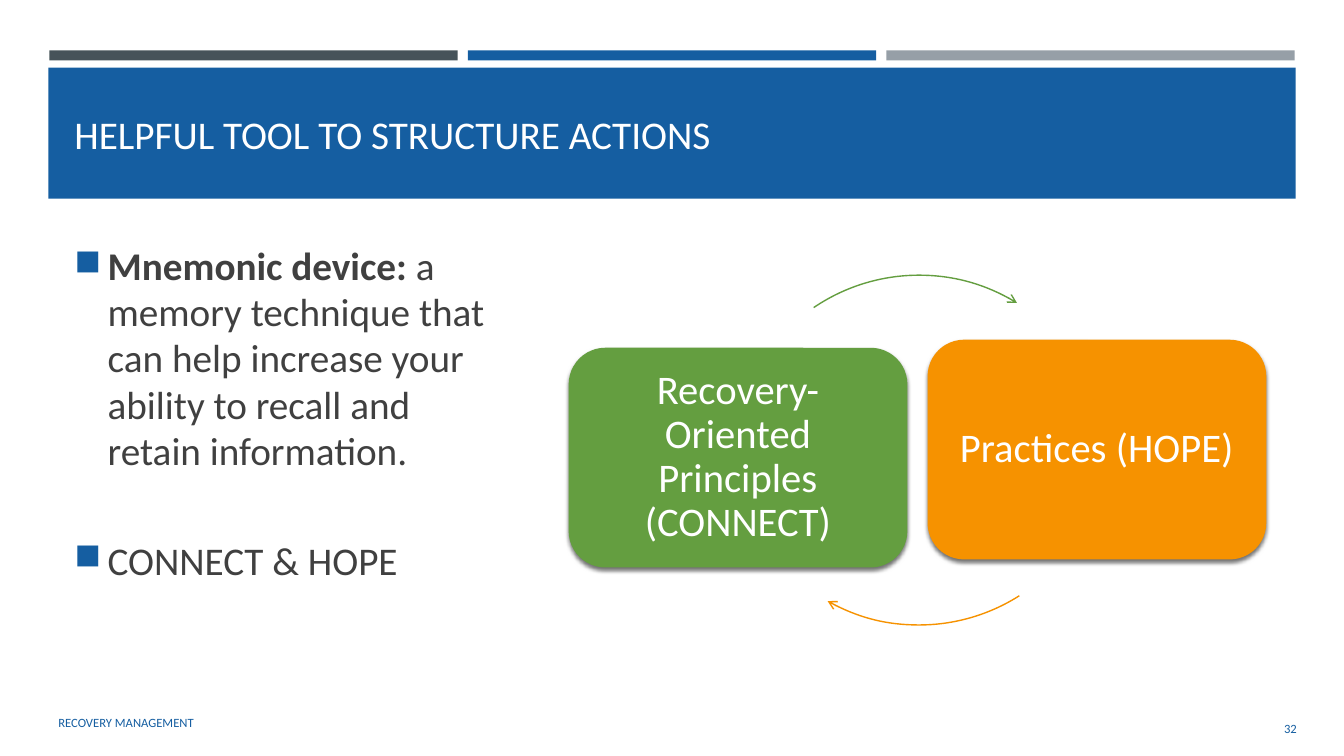
import dataclasses

import lxml.etree
import pptx
import pptx.dml.color
import pptx.enum.shapes
import pptx.enum.text
import pptx.oxml
import pptx.oxml.ns
import pptx.util

Inches = pptx.util.Inches
Pt = pptx.util.Pt
Kind = pptx.enum.shapes.MSO_SHAPE
Align = pptx.enum.text.PP_ALIGN
Anchor = pptx.enum.text.MSO_ANCHOR
qn = pptx.oxml.ns.qn


@dataclasses.dataclass(frozen=True)
class Theme:
    font: str = "Calibri"
    blue: str = "155EA1"
    slate: str = "465359"
    gray: str = "969FA7"
    ink: str = "404040"
    white: str = "FFFFFF"
    black: str = "000000"
    green: str = "649E40"
    gold: str = "F69200"
    small: int = 9
    large: int = 28
    label: int = 29


def tint(code):
    return pptx.dml.color.RGBColor.from_string(code)


def apply(target, values):
    for name, value in values.items():
        setattr(target, name, value)


def child(parent, tag, **attrs):
    node = lxml.etree.SubElement(parent, qn(tag))
    for name, value in attrs.items():
        node.set(name, str(value))
    return node


class Deck:
    def __init__(self, slide, theme):
        self.slide = slide
        self.theme = theme

    def shape(self, kind, box, fill):
        shape = self.slide.shapes.add_shape(kind, *map(Inches, box))
        shape.shadow.inherit = False
        if fill:
            shape.fill.solid()
            shape.fill.fore_color.rgb = tint(fill)
        else:
            shape.fill.background()
        shape.line.fill.background()
        return shape

    def words(self, para, parts, size, color, **form):
        apply(para, form)
        for words, bold in parts:
            run = para.add_run()
            run.text = words
            apply(run.font, {"name": self.theme.font, "size": Pt(size), "bold": bold})
            run.font.color.rgb = tint(color)

    def text(self, box, words, size, color, align=Align.LEFT):
        frame = self.slide.shapes.add_textbox(*map(Inches, box)).text_frame
        apply(frame, {"word_wrap": True, "vertical_anchor": Anchor.MIDDLE})
        self.words(frame.paragraphs[0], [(words, False)], size, color, alignment=align)

    def bullets(self, box, items):
        frame = self.slide.shapes.add_textbox(*map(Inches, box)).text_frame
        frame.word_wrap = True
        for index, parts in enumerate(items):
            para = frame.add_paragraph() if index else frame.paragraphs[0]
            form = {"line_spacing": 0.98, "space_before": Pt(46 if index else 0)}
            apply(para, form)
            props = para._p.get_or_add_pPr()
            indent = Inches(0.33)
            props.set("marL", str(indent))
            props.set("indent", str(-indent))
            child(child(props, "a:buClr"), "a:srgbClr", val=self.theme.blue)
            child(props, "a:buSzPct", val=92000)
            child(props, "a:buChar", char="■")
            self.words(para, parts, self.theme.large, self.theme.ink)

    def card(self, box, words, fill):
        card = self.shape(Kind.ROUNDED_RECTANGLE, box, fill)
        glow = child(
            card._element.spPr.find(qn("a:effectLst")), "a:outerShdw",
            blurRad=Pt(3), dist=Pt(2), dir=90 * 60000, algn="ctr", rotWithShape=0,
        )
        child(child(glow, "a:srgbClr", val=self.theme.black), "a:alpha", val=55000)
        frame = card.text_frame
        sides = ("left", "top", "right", "bottom")
        apply(frame, {f"margin_{side}": Inches(0.12) for side in sides})
        apply(frame, {"word_wrap": True, "vertical_anchor": Anchor.MIDDLE})
        self.words(
            frame.paragraphs[0], [(words, False)], self.theme.label, self.theme.white,
            alignment=Align.CENTER, line_spacing=0.9,
        )

    def arc(self, box, start, end, color):
        arc = self.shape(Kind.ARC, box, None)
        for index, angle in enumerate((start, end)):
            arc.adjustments[index] = angle * 0.6
        arc.line.color.rgb = tint(color)
        arc.line.width = Pt(1)
        child(arc._element.spPr.get_or_add_ln(), "a:tailEnd", type="arrow")


def main():
    show = pptx.Presentation()
    apply(show, {"slide_width": Inches(13.33), "slide_height": Inches(7.5)})
    theme = Theme()
    deck = Deck(show.slides.add_slide(show.slide_layouts[6]), theme)

    for index, color in enumerate((theme.slate, theme.blue, theme.gray)):
        deck.shape(Kind.RECTANGLE, (0.49 + index * 4.15, 0.5, 4.05, 0.1), color)
    deck.shape(Kind.RECTANGLE, (0.48, 0.67, 12.37, 1.3), theme.blue)

    deck.text((11.81, 7.03, 1.15, 0.4), "32", theme.small, theme.blue, Align.RIGHT)
    deck.text((0.48, 6.97, 7.46, 0.4), "RECOVERY MANAGEMENT", theme.small, theme.blue)
    title = "HELPFUL TOOL TO STRUCTURE ACTIONS"
    deck.text((0.64, 0.77, 12.06, 1.11), title, theme.large, theme.white)

    meaning = "a memory technique that can help increase your ability to recall and retain information."
    deck.bullets((0.64, 2.37, 4.34, 4.35), [
        [("Mnemonic device: ", True), (meaning, False)],
        [("CONNECT & HOPE", False)],
    ])

    cycle = (
        (5.64, 3.45, "Recovery-Oriented Principles (CONNECT)", theme.green, 2.73, 235.75, 301.6),
        (9.2, 3.37, "Practices (HOPE)", theme.gold, 2.49, 57.55, 119.25),
    )
    for left, top, words, color, ring, start, end in cycle:
        deck.card((left, top, 3.36, 2.18), words, color)
        deck.arc((7.26, ring, 3.71, 3.71), start, end, color)

    show.save("out.pptx")


if __name__ == "__main__":
    main()
